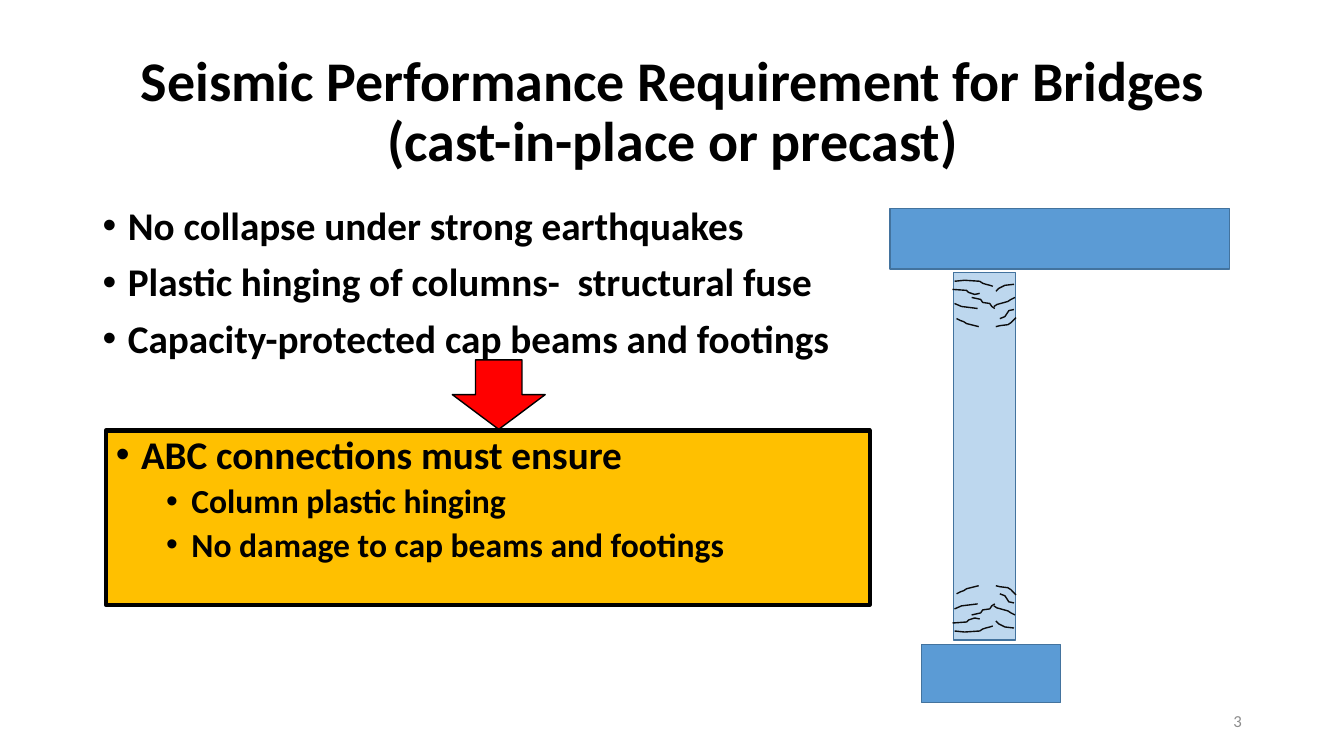
from lxml.etree import SubElement
from pptx import Presentation
from pptx.dml.color import RGBColor
from pptx.enum.shapes import MSO_SHAPE
from pptx.enum.text import MSO_ANCHOR, PP_ALIGN
from pptx.oxml.ns import qn
from pptx.util import Cm, Pt

BLACK = "000000"
CRACK_UNIT = Cm(0.0254)
# Cracks at the column top, in crack units from its top left corner
CRACKS = [
    [(-1, 17), (13, 18), (15, 20), (21, 22), (26, 21)],
    [(60, 12), (51, 13), (45, 16), (42, 19)],
    [(1, 31), (8, 34), (16, 35), (24, 36)],
    [(61, 25), (57, 27), (54, 29), (43, 32), (40, 34)],
    [(3, 46), (7, 48), (10, 49), (13, 51), (17, 52), (21, 53), (25, 54)],
    [(62, 45), (57, 50), (54, 52), (46, 53), (42, 54)],
    [(18, 25), (27, 27), (29, 30), (36, 31), (38, 34), (41, 36)],
    [(60, 37), (55, 38), (51, 44), (46, 46)],
    [(1, 9), (11, 8), (26, 9), (29, 11), (32, 12), (36, 13), (39, 14)],
]


def color(hex_string):
    return RGBColor.from_string(hex_string)


def set_line(shape, line_color, width):
    shape.shadow.inherit = False
    shape.line.color.rgb = color(line_color)
    shape.line.width = Pt(width)


def add_block(shapes, kind, box, fill, line_color, width=1):
    shape = shapes.add_shape(kind, *box)
    shape.fill.solid()
    shape.fill.fore_color.rgb = color(fill)
    set_line(shape, line_color, width)
    return shape


def format_runs(paragraph, size, text_color=BLACK, bold=True):
    for run in paragraph.runs:
        run.font.name = "Calibri"
        run.font.size = Pt(size)
        run.font.bold = bold
        run.font.color.rgb = color(text_color)


def add_line_of_text(slide, box, text, alignment, size, text_color=BLACK, bold=True):
    """Add a vertically centred one-paragraph text box."""
    frame = slide.shapes.add_textbox(*box).text_frame
    frame.word_wrap = True
    frame.vertical_anchor = MSO_ANCHOR.MIDDLE
    paragraph = frame.paragraphs[0]
    paragraph.text = text
    paragraph.alignment = alignment
    format_runs(paragraph, size, text_color, bold)
    return paragraph


def fill_bullets(frame, items):
    """Write (level, text) items as a bulleted list."""
    frame.word_wrap = True
    frame.vertical_anchor = MSO_ANCHOR.TOP
    frame.text = "\n".join(text for level, text in items)
    for paragraph, (level, text) in zip(frame.paragraphs, items):
        paragraph.level = level
        paragraph.alignment = PP_ALIGN.LEFT
        paragraph.line_spacing = 0.9
        paragraph.space_before = Pt(5 if level else 10)
        format_runs(paragraph, 24 if level else 28)
        properties = paragraph._p.get_or_add_pPr()
        properties.set("marL", str(Cm(0.635 + 1.27 * level)))
        properties.set("indent", str(-Cm(0.635)))
        SubElement(properties, qn("a:buFont"), typeface="Arial")
        SubElement(properties, qn("a:buChar"), char="•")


def add_requirements(slide, box):
    frame = slide.shapes.add_textbox(*box).text_frame
    fill_bullets(frame, [
        (0, "No collapse under strong earthquakes"),
        (0, "Plastic hinging of columns-  structural fuse"),
        (0, "Capacity-protected cap beams and footings"),
    ])


def add_conclusion(slide, box):
    """Add the highlighted box and the arrow that points down to it."""
    left, top, width, height = box
    arrow_box = left + Cm(8.73), top - Cm(1.78), Cm(2.34), Cm(1.75)
    add_block(slide.shapes, MSO_SHAPE.DOWN_ARROW, arrow_box, "FF0000", BLACK)
    panel = add_block(slide.shapes, MSO_SHAPE.RECTANGLE, box, "FFC000", BLACK, 3)
    fill_bullets(panel.text_frame, [
        (0, "ABC connections must ensure"),
        (1, "Column plastic hinging"),
        (1, "No damage to cap beams and footings"),
    ])


def add_crack(shapes, left, top, points):
    builder = shapes.build_freeform(*points[0], scale=CRACK_UNIT)
    builder.add_line_segments(points[1:], close=False)
    crack = builder.convert_to_shape(left, top)
    crack.fill.background()
    set_line(crack, "0D0D0D", 1)


def add_pier(slide, box):
    """Draw cap beam, footing and a column cracked alike at both ends."""
    left, top, width, height = box
    shapes = slide.shapes.add_group_shape().shapes
    column_left, column_top = left + Cm(1.6), top + Cm(1.6)
    column_height = Cm(9.27)
    footing_height = Cm(1.47)
    members = [
        ((column_left, column_top, Cm(1.57), column_height), "BDD7EE"),
        ((left, top, width, Cm(1.52)), "5B9BD5"),
        ((left + Cm(0.79), top + height - footing_height, Cm(3.51), footing_height),
         "5B9BD5"),
    ]
    for member_box, fill in members:
        add_block(shapes, MSO_SHAPE.RECTANGLE, member_box, fill, "43739E")
    column_units = round(column_height / CRACK_UNIT)
    for points in CRACKS:
        mirrored = [(x, column_units - y) for x, y in points]
        add_crack(shapes, column_left, column_top, points)
        add_crack(shapes, column_left, column_top, mirrored)


def main():
    presentation = Presentation()
    presentation.slide_width = Cm(33.87)
    presentation.slide_height = Cm(19.05)
    slide = presentation.slides.add_slide(presentation.slide_layouts[6])
    title = add_line_of_text(
        slide, (Cm(2.34), Cm(1.02), Cm(29.21), Cm(3.68)),
        "Seismic Performance Requirement for Bridges\v(cast-in-place or precast)",
        PP_ALIGN.CENTER, 40)
    title.line_spacing = 0.9
    add_requirements(slide, (Cm(2.34), Cm(5.08), Cm(19.25), Cm(4.39)))
    add_pier(slide, (Cm(22.43), Cm(5.26), Cm(8.56), Cm(12.45)))
    add_conclusion(slide, (Cm(2.67), Cm(10.85), Cm(19.25), Cm(4.39)))
    add_line_of_text(slide, (Cm(23.93), Cm(17.65), Cm(7.62), Cm(1.02)), "3",
                     PP_ALIGN.RIGHT, 12, "8C8C8C", False)
    presentation.save("out.pptx")


if __name__ == "__main__":
    main()
